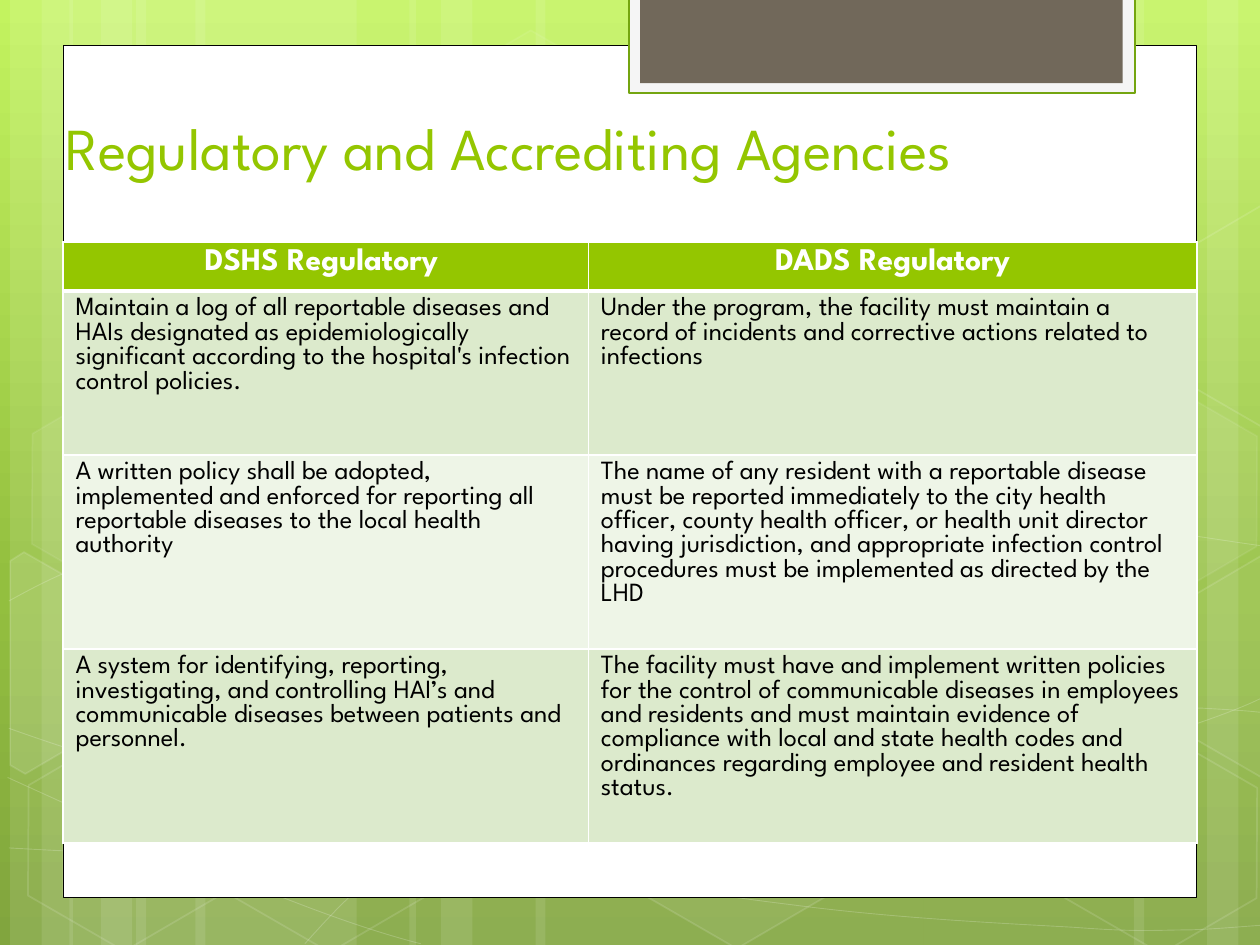
from math import cos, radians, sin

from lxml import etree
from pptx import Presentation
from pptx.dml.color import RGBColor
from pptx.enum.shapes import MSO_SHAPE
from pptx.enum.text import MSO_ANCHOR, MSO_AUTO_SIZE, PP_ALIGN
from pptx.oxml.ns import qn
from pptx.util import Cm, Pt

RECTANGLE, HEXAGON = MSO_SHAPE.RECTANGLE, MSO_SHAPE.HEXAGON
LEFT, CENTER = PP_ALIGN.LEFT, PP_ALIGN.CENTER
BOTTOM, NO_AUTOFIT = MSO_ANCHOR.BOTTOM, MSO_AUTO_SIZE.NONE
FONT = "League Spartan"
TILT = 30
COLORS = {
    "white": "FFFFFF", "black": "000000", "green": "94C600",
    "tab_frame": "F5F5F5", "tab_line": "74A510", "tab": "71685A",
    "row_odd": "DCEACC", "row_even": "EEF5E7",
    "sky_top": "C3F35F", "sky_mid": "93BF3F", "sky_low": "81A53E",
}

# Decoration, in inches
BAND_TRIOS = [
    [(1.08, 1.75), (0.08, 0.5), (0.33, 0.83)],
    [(1.55, 1.75), (0.55, 0.5), (0.8, 0.83)],
    [(7.33, 1.75), (9.58, 0.5), (9, 0.83)],
    [(4.25, 3.08), (3.25, 0.5), (3.5, 0.83)],
]
# Each wave: a start point, then three points for every Bezier segment
WAVES = [
    [(0.07, 6.73), (0.61, 6.76), (1.15, 6.79), (1.9, 6.78), (2.65, 6.77), (3.58, 6.75),
     (4.58, 6.65), (5.58, 6.55), (7, 6.36), (7.92, 6.17), (8.83, 5.98), (9.77, 5.68),
     (10.07, 5.51)],
    [(0.07, 4.77), (0.36, 4.61), (0.65, 4.46), (1.21, 4.31), (1.78, 4.16), (2.59, 3.94),
     (3.47, 3.87), (4.36, 3.8), (5.44, 3.79), (6.54, 3.87), (7.64, 3.95), (9.47, 4.26),
     (10.07, 4.34)],
    [(0.06, 6.17), (1.27, 6.72), (2.47, 7.27), (3.34, 7.49)],
    [(0.07, 5.78), (0.38, 5.89), (0.7, 6), (1.28, 6.16), (1.86, 6.31), (2.73, 6.56),
     (3.57, 6.73), (4.4, 6.9), (5.45, 7.08), (6.28, 7.18), (7.11, 7.29), (8, 7.33),
     (8.53, 7.36), (9.05, 7.4), (9.19, 7.38), (9.45, 7.38), (9.71, 7.37), (9.89, 7.35),
     (10.07, 7.34)],
    [(2.42, 7.49), (2.6, 7.29), (2.78, 7.09), (3.02, 6.91), (3.26, 6.73), (3.6, 6.53),
     (3.88, 6.39), (4.16, 6.25), (4.33, 6.19), (4.7, 6.09), (5.06, 5.99), (5.73, 5.85),
     (6.08, 5.78), (6.44, 5.71), (6.49, 5.71), (6.8, 5.69), (7.11, 5.66), (7.6, 5.63),
     (7.94, 5.62), (8.29, 5.61), (8.86, 5.62), (8.86, 5.62), (9.08, 5.62), (9.31, 5.62),
     (9.53, 5.62), (9.71, 5.63), (9.88, 5.64), (9.97, 5.65), (10.06, 5.66), (10.03, 5.65),
     (10.06, 5.66)],
]
# left, top, fill opacity (None for outline only), line opacity
HEXAGONS = [
    (3.34, 0.36, 4, 8), (4.97, 5.89, 6, 12), (0.11, 5.91, None, 12),
    (0.14, 3.12, 7, 8), (1.74, 5.92, None, 12), (7.53, 4.53, 10, 12),
    (8.34, 5.93, None, 12), (8.34, 3.14, 7, 8),
]
# Hexagons cut by the slide edge: centre, points as seen, fill opacity
CUT_HEXAGONS = [
    ((0.36, 5.35), [(0.08, 4.45), (0.19, 4.38), (0.96, 4.82), (0.95, 5.7), (0.2, 6.14),
                    (0.08, 6.07)], 10),
    ((9.85, 5.2), [(9.26, 4.85), (10.01, 4.41), (10.09, 4.46), (10.09, 6.13),
                   (10.02, 6.17), (9.26, 5.73)], 4),
    ((9.85, 2.41), [(9.26, 2.07), (10.01, 1.63), (10.1, 1.68), (10.09, 3.35),
                    (10.02, 3.39), (9.26, 2.95)], None),
]

REGULATIONS = [
    ("DSHS Regulatory ", "DADS Regulatory"),
    ("Maintain a log of all reportable diseases and HAIs designated as epidemiologically "
     "significant according to the hospital's infection control policies.",
     "Under the program, the facility must maintain a record of incidents and corrective "
     "actions related to infections"),
    ("A written policy shall be adopted, implemented and enforced for reporting all "
     "reportable diseases to the local health authority",
     "The name of any resident with a reportable disease must be reported immediately to "
     "the city health officer, county health officer, or health unit director having "
     "jurisdiction, and appropriate infection control procedures must be implemented as "
     "directed by the LHD"),
    ("A system for identifying, reporting, investigating, and controlling HAI’s and "
     "communicable diseases between patients and personnel.",
     "The facility must have and implement written policies for the control of "
     "communicable diseases in employees and residents and must maintain evidence of "
     "compliance with local and state health codes and ordinances regarding employee and "
     "resident health status."),
]


def inches(*lengths):
    return [Cm(length * 2.54) for length in lengths]


def rgb(name):
    return RGBColor.from_string(COLORS[name])


def write(frame, text, size, color, bold=False, align=LEFT):
    paragraph = frame.paragraphs[0]
    paragraph.alignment = align
    run = paragraph.add_run()
    run.text = text
    run.font.name, run.font.size, run.font.bold = FONT, Pt(size), bold
    run.font.color.rgb = rgb(color)


def untilt(point, center):
    """Turn a point back by the tilt, so that the rotated shape shows it in place."""
    x, y = point[0] - center[0], point[1] - center[1]
    c, s = cos(radians(TILT)), sin(radians(TILT))
    return center[0] + x * c + y * s, center[1] - x * s + y * c


class SlideBuilder:
    def __init__(self, slide):
        self.slide = slide

    def background(self, stops):
        fill = self.slide.background.fill
        fill.gradient()
        fill.gradient_angle = 270
        stop_list = self.slide.element.find(".//" + qn("a:gsLst"))
        for old_stop in list(stop_list):
            stop_list.remove(old_stop)
        for percent, color in stops:
            stop = etree.SubElement(stop_list, qn("a:gs"), pos=str(percent * 1000))
            etree.SubElement(stop, qn("a:srgbClr"), val=COLORS[color])

    def paint(self, shape, fill=None, line=None, width=1, fill_alpha=100, line_alpha=100):
        shape.shadow.inherit = False
        parts = ((shape.fill, fill, fill_alpha, "a:solidFill/a:srgbClr"),
                 (shape.line.fill, line, line_alpha, "a:ln/a:solidFill/a:srgbClr"))
        for part, color, alpha, route in parts:
            if color is None:
                part.background()
                continue
            part.solid()
            part.fore_color.rgb = rgb(color)
            if alpha < 100:
                node = shape.element.spPr.find("/".join(map(qn, route.split("/"))))
                etree.SubElement(node, qn("a:alpha"), val=str(alpha * 1000))
        if line:
            shape.line.width = Pt(width)

    def preset(self, kind, box, **style):
        shape = self.slide.shapes.add_shape(kind, *inches(*box))
        self.paint(shape, **style)
        return shape

    def hexagon(self, left, top, **style):
        shape = self.preset(HEXAGON, (left, top, 1.75, 1.52), **style)
        shape.adjustments[0], shape.adjustments[1] = 0.285, 1.155
        shape.rotation = TILT

    def outline(self, points, closed, **style):
        start, *rest = [inches(*point) for point in points]
        builder = self.slide.shapes.build_freeform(*start)
        builder.add_line_segments(rest, close=closed)
        shape = builder.convert_to_shape()
        self.paint(shape, **style)
        return shape

    def wave(self, points):
        """Draw the points as line segments, then join each three into a Bezier."""
        shape = self.outline(points, False, line="white", width=0.5, line_alpha=20)
        segments = list(shape.element.iter(qn("a:lnTo")))
        for i in range(0, len(segments), 3):
            curve = etree.Element(qn("a:cubicBezTo"))
            segments[i].addprevious(curve)
            for segment in segments[i:i + 3]:
                curve.append(segment[0])
                segment.getparent().remove(segment)

    def title(self, text, box):
        title = self.slide.shapes.title
        title.left, title.top, title.width, title.height = inches(*box)
        title.element.getparent().append(title.element)  # bring to front
        frame = title.text_frame
        frame.auto_size, frame.vertical_anchor = NO_AUTOFIT, BOTTOM
        write(frame, text, 34, "green")

    def border(self, cell, bottom):
        properties = cell._tc.get_or_add_tcPr()
        for side, width in (("L", 1), ("R", 1), ("T", 1), ("B", bottom)):
            line = etree.SubElement(properties, qn("a:ln" + side), w=str(Pt(width)))
            fill = etree.SubElement(line, qn("a:solidFill"))
            etree.SubElement(fill, qn("a:srgbClr"), val=COLORS["white"])

    def table(self, rows, left, top, widths, heights):
        box = inches(left, top, sum(widths), sum(heights))
        table = self.slide.shapes.add_table(len(rows), len(widths), *box).table
        for column, width in zip(table.columns, inches(*widths)):
            column.width = width
        for r, (texts, height) in enumerate(zip(rows, inches(*heights))):
            table.rows[r].height = height
            header = r == 0
            fill = "green" if header else "row_odd" if r % 2 else "row_even"
            for c, text in enumerate(texts):
                cell = table.cell(r, c)
                self.border(cell, bottom=3 if header else 1)
                cell.fill.solid()
                cell.fill.fore_color.rgb = rgb(fill)
                if header:
                    write(cell.text_frame, text, 18, "white", bold=True, align=CENTER)
                else:
                    cell.margin_right = Cm(0.3)
                    write(cell.text_frame, text, 15, "black")


def main():
    deck = Presentation()
    deck.slide_width, deck.slide_height = Cm(25.4), Cm(19.05)
    page = SlideBuilder(deck.slides.add_slide(deck.slide_layouts[5]))

    page.background([(0, "sky_top"), (62, "sky_mid"), (100, "sky_low")])
    for trio in BAND_TRIOS:
        for left, width in trio:
            page.preset(RECTANGLE, (left, 0, width, 7.5), fill="white", fill_alpha=10)
    for wave in WAVES:
        page.wave(wave)
    for left, top, fill_alpha, line_alpha in HEXAGONS:
        page.hexagon(left, top, fill="white" if fill_alpha else None,
                     fill_alpha=fill_alpha, line="white", line_alpha=line_alpha)
    for center, points, fill_alpha in CUT_HEXAGONS:
        cut = page.outline([untilt(point, center) for point in points], True,
                           fill="white" if fill_alpha else None, fill_alpha=fill_alpha,
                           line="white", line_alpha=12)
        cut.rotation = TILT

    page.preset(RECTANGLE, (0.5, 0.36, 9, 6.76), fill="white", line="black", width=0.5)
    page.preset(RECTANGLE, (4.99, -0.02, 4.02, 0.76), fill="tab_frame", line="tab_line",
                width=1.25)
    page.preset(RECTANGLE, (5.08, -0.02, 3.83, 0.68), fill="tab")
    page.title("Regulatory and Accrediting Agencies", (0.42, 0.25, 9.33, 1.25))
    page.table(REGULATIONS, 0.5, 1.92, [4.17, 4.83], [0.39, 1.3, 1.54, 1.54])
    deck.save("out.pptx")


if __name__ == "__main__":
    main()
